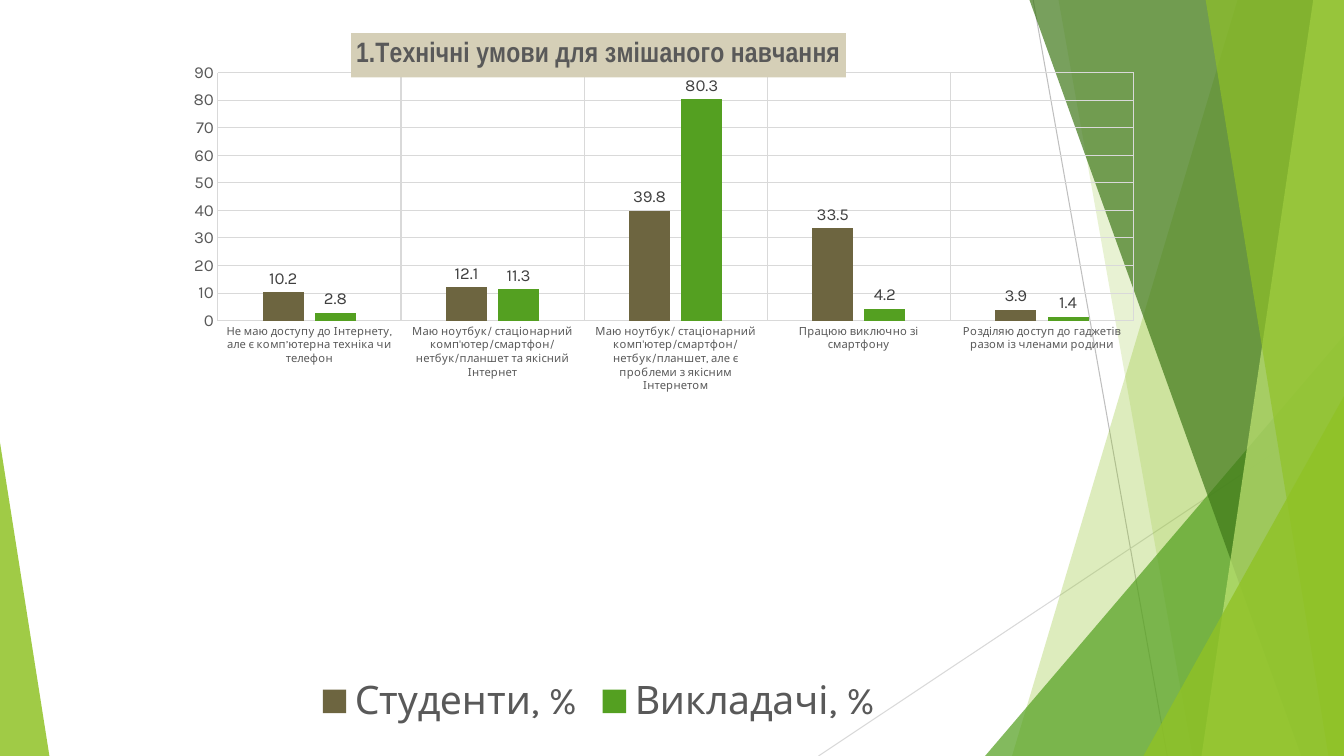
from collections import namedtuple

from lxml.etree import SubElement
from pptx import Presentation
from pptx.chart.data import CategoryChartData
from pptx.dml.color import RGBColor
from pptx.enum.chart import XL_CHART_TYPE, XL_LABEL_POSITION, XL_LEGEND_POSITION, XL_TICK_MARK
from pptx.enum.shapes import MSO_CONNECTOR, MSO_SHAPE
from pptx.oxml import parse_xml
from pptx.oxml.ns import nsdecls, qn
from pptx.util import Pt

Box = namedtuple("Box", "left top width height")
SLIDE = Box(0, 0, 960, 540)
CHART = Box(34.56, 9.36, 786.24, 513.36)

GREY, GRID, LIME, GREEN = "595959", "D9D9D9", "90C226", "54A021"
AXIS_LABELS = {"name": "Karla", "size": Pt(12), "bold": False}

# Full-height bands: left edge at the top, left edge at the bottom, colour, opacity
BACK_BANDS = [(884.16, 722.88, LIME, 30), (756, 851.76, LIME, 20)]
FRONT_BANDS = [
    (735.12, 929.52, "3F7819", 70),
    (938.16, 858.24, "C0E474", 70),
    (861.12, 948.96, LIME, 65),
]

CATEGORIES = [
    "Не маю доступу до Інтернету, але є комп’ютерна техніка чи телефон",
    "Маю ноутбук/ стаціонарний комп'ютер/смартфон/нетбук/планшет та якісний Інтернет",
    "Маю ноутбук/ стаціонарний комп'ютер/смартфон/нетбук/планшет, але є проблеми з якісним Інтернетом",
    "Працюю виключно зі смартфону",
    "Розділяю доступ до гаджетів разом із членами родини",
]
SERIES = [
    ("Студенти, %", (10.2, 12.1, 39.8, 33.5, 3.9), "6D6540"),
    ("Викладачі, %", (2.8, 11.3, 80.3, 4.2, 1.4), GREEN),
]


def color(hex_string):
    return RGBColor.from_string(hex_string)


def apply(target, values):
    for name, value in values.items():
        setattr(target, name, value)


def style_font(font, values, hex_string):
    apply(font, values)
    font.color.rgb = color(hex_string)


def style_line(line, hex_string):
    line.width = Pt(0.75)
    line.color.rgb = color(hex_string)


def paint(shape, hex_string, opacity):
    shape.shadow.inherit = False
    shape.line.fill.background()
    shape.fill.solid()
    shape.fill.fore_color.rgb = color(hex_string)
    srgb = shape.fill._xPr.find(".//" + qn("a:srgbClr"))
    SubElement(srgb, qn("a:alpha")).set("val", str(opacity * 1000))


def add_line(page, start, end, hex_string):
    line = page.shapes.add_connector(MSO_CONNECTOR.STRAIGHT, *map(Pt, start + end))
    style_line(line.line, hex_string)
    SubElement(line._element.spPr, qn("a:effectLst"))


def add_bands(page, box, bands):
    right, bottom = Pt(box.left + box.width), Pt(box.top + box.height)
    top = Pt(box.top - 0.72)
    for top_x, bottom_x, hex_string, opacity in bands:
        outline = page.shapes.build_freeform(Pt(box.left + top_x), top)
        outline.add_line_segments(
            [(right, top), (right, bottom), (Pt(box.left + bottom_x), bottom)], close=True)
        paint(outline.convert_to_shape(), hex_string, opacity)


def add_corner(page, box, width, height, tip, hex_string, opacity):
    """Right-angled triangle in a bottom corner: tip 0 is left, 1 is right."""
    left = box.left + tip * (box.width - width)
    top = box.top + box.height - height
    corner = page.shapes.add_shape(
        MSO_SHAPE.ISOSCELES_TRIANGLE, *map(Pt, (left, top, width, height)))
    corner.adjustments[0] = tip
    paint(corner, hex_string, opacity)


def add_background(page, box):
    left, top, right, bottom = box.left, box.top, box.left + box.width, box.top + box.height
    add_line(page, (left + 738, top), (left + 833.76, bottom), "BFBFBF")
    add_line(page, (right, top + 290.16), (left + 584.64, bottom), GRID)
    add_bands(page, box, BACK_BANDS)
    add_corner(page, box, 256.32, 300.24, 1, GREEN, 72)
    add_bands(page, box, FRONT_BANDS)
    add_corner(page, box, 143.28, 257.04, 1, LIME, 80)
    add_corner(page, box, 35.28, 223.92, 0, LIME, 85)


def set_layout(parent, index, values):
    """Give a chart part a manual place, in fractions of the chart."""
    for old in parent.findall(qn("c:layout")):
        parent.remove(old)
    layout = parse_xml(f"<c:layout {nsdecls('c')}><c:manualLayout/></c:layout>")
    for name, value in values.items():
        SubElement(layout[0], qn("c:" + name)).set("val", str(value))
    parent.insert(index, layout)


def style_title(chart):
    title = chart.chart_title
    span = title.text_frame.paragraphs[0].add_run()
    span.text = "1.Технічні умови для змішаного навчання"
    style_font(span.font, {"name": "Arial Narrow", "size": Pt(20), "bold": True}, GREY)
    title.format.fill.solid()
    title.format.fill.fore_color.rgb = color("D5CFB7")
    set_layout(title._element, 1, {"xMode": "edge", "yMode": "edge", "x": 0.275, "y": 0.028})


def style_axes(chart):
    for axis, size in ((chart.category_axis, 8), (chart.value_axis, 12)):
        apply(axis, {"has_major_gridlines": True, "major_tick_mark": XL_TICK_MARK.NONE,
                     "minor_tick_mark": XL_TICK_MARK.NONE})
        style_line(axis.major_gridlines.format.line, GRID)
        style_font(axis.tick_labels.font, AXIS_LABELS | {"size": Pt(size)}, GREY)
    style_line(chart.category_axis.format.line, GRID)
    apply(chart.value_axis, {"minimum_scale": 0, "maximum_scale": 90, "major_unit": 10})
    chart.value_axis.format.line.fill.background()


def style_columns(chart):
    plot = chart.plots[0]
    apply(plot, {"gap_width": 219, "overlap": -27, "vary_by_categories": False})
    for series, (_, _, hex_string) in zip(plot.series, SERIES):
        series.format.fill.solid()
        series.format.fill.fore_color.rgb = color(hex_string)
        labels = series.data_labels
        apply(labels, {"show_value": True, "position": XL_LABEL_POSITION.OUTSIDE_END})
        style_font(labels.font, AXIS_LABELS, "404040")


def add_survey_chart(page, box):
    data = CategoryChartData()
    data.categories = CATEGORIES
    for name, values, _ in SERIES:
        data.add_series(name, values)
    frame = page.shapes.add_chart(XL_CHART_TYPE.COLUMN_CLUSTERED, *map(Pt, box), data)
    chart = frame.chart
    style_font(chart.font, {"name": "Karla", "size": Pt(10)}, "000000")
    style_title(chart)
    style_axes(chart)
    style_columns(chart)
    set_layout(chart._chartSpace.chart.plotArea, 0, {
        "layoutTarget": "inner", "xMode": "edge", "yMode": "edge",
        "x": 0.154, "y": 0.083, "w": 0.832, "h": 0.345})

    # Legend
    chart.has_legend = True
    apply(chart.legend, {"position": XL_LEGEND_POSITION.BOTTOM, "include_in_layout": False})
    style_font(chart.legend.font, AXIS_LABELS | {"size": Pt(28)}, GREY)


def main():
    deck = Presentation()
    apply(deck, {"slide_width": Pt(SLIDE.width), "slide_height": Pt(SLIDE.height)})
    page = deck.slides.add_slide(deck.slide_layouts[6])
    add_background(page, SLIDE)
    add_survey_chart(page, CHART)
    deck.save("out.pptx")


if __name__ == "__main__":
    main()
